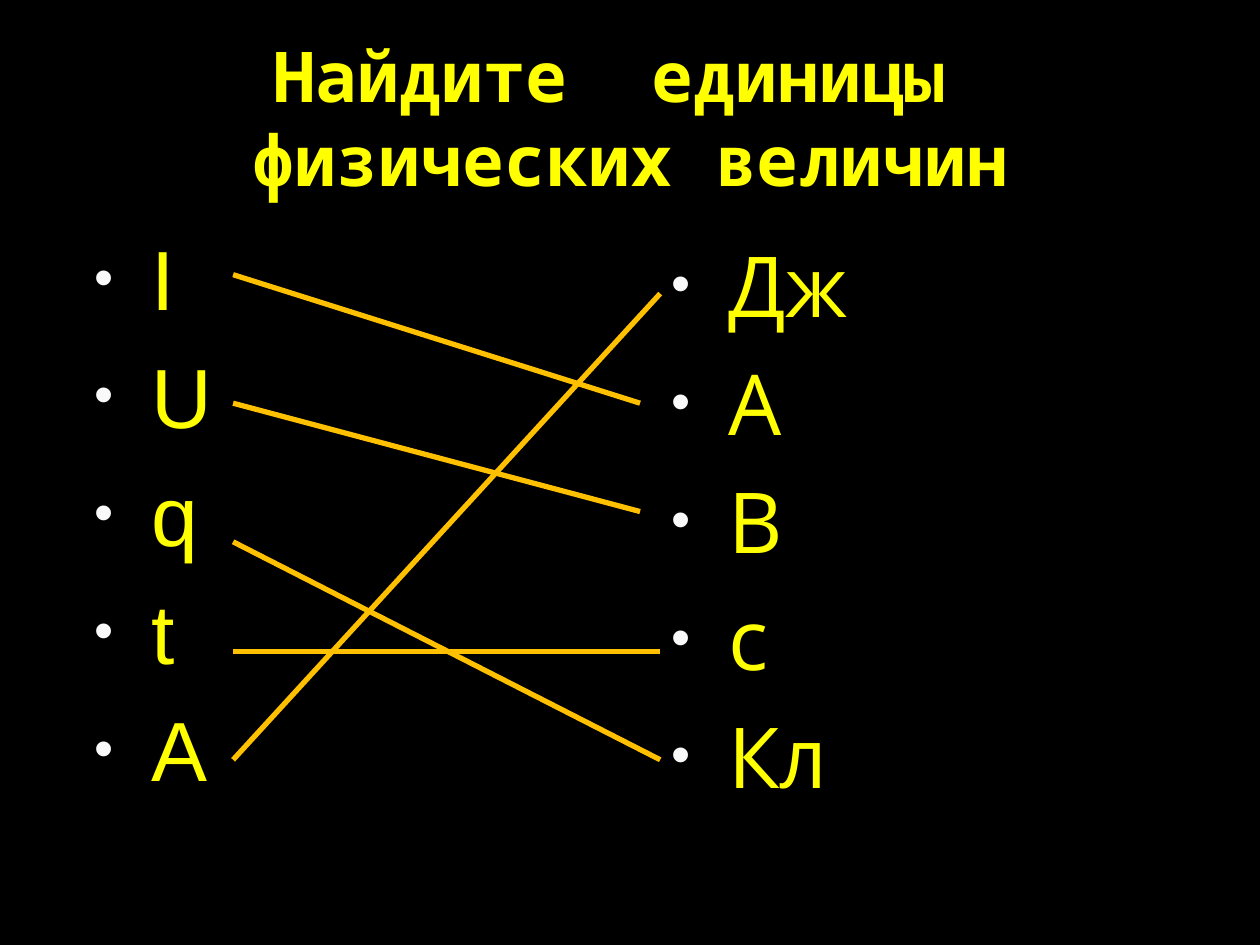
from dataclasses import dataclass

from lxml.etree import SubElement
from pptx import Presentation
from pptx.dml.color import RGBColor
from pptx.enum.shapes import MSO_CONNECTOR
from pptx.enum.text import MSO_ANCHOR, PP_ALIGN
from pptx.oxml.ns import qn
from pptx.util import Inches, Pt


@dataclass(frozen=True)
class Theme:
    background: RGBColor = RGBColor(0, 0, 0)
    text: RGBColor = RGBColor(0xFF, 0xFF, 0)
    line: RGBColor = RGBColor(0xFF, 0xC0, 0)
    bullet: str = "F9F9F9"
    title_font: str = "Noto Sans Mono"
    symbol_font: str = "Arial"
    unit_font: str = "Open Sans"
    title_size: int = 40
    body_size: int = 48
    line_width: int = 3


THEME = Theme()
ROW_PITCH = 67.3  # points from one list baseline to the next

SYMBOLS = ["I", "U", "q", "t", "A"]
UNITS = ["Дж", "А", "В", "с", "Кл"]

# Height at the symbol, then right end at the unit
MATCHES = [
    (2.18, 5.08, 3.2),
    (3.2, 5.08, 4.06),
    (4.3, 5.24, 6.03),
    (5.17, 5.24, 5.17),
    (6.03, 5.24, 2.33),
]


def add_text_frame(s, left, top, width, height):
    box = s.shapes.add_textbox(*map(Inches, (left, top, width, height)))
    tf = box.text_frame
    tf.word_wrap = True
    return tf


def add_run(p, text, font, size, bold=False):
    r = p.add_run()
    r.text = text
    r.font.name = font
    r.font.size = Pt(size)
    r.font.bold = bold
    r.font.color.rgb = THEME.text


def add_title(s, text):
    tf = add_text_frame(s, 0.5, 0.3, 9, 1.25)
    tf.vertical_anchor = MSO_ANCHOR.MIDDLE
    p = tf.paragraphs[0]
    p.alignment = PP_ALIGN.CENTER
    p.line_spacing = Pt(THEME.title_size * 1.2)
    add_run(p, text, THEME.title_font, THEME.title_size, bold=True)


def add_bullet(p):
    pPr = p._p.get_or_add_pPr()
    pPr.set("marL", str(Inches(0.6)))
    pPr.set("indent", str(Inches(-0.45)))
    color = SubElement(pPr, qn("a:buClr"))
    SubElement(color, qn("a:srgbClr"), val=THEME.bullet)
    SubElement(pPr, qn("a:buSzPct"), val="65000")
    SubElement(pPr, qn("a:buFont"), typeface=THEME.symbol_font)
    SubElement(pPr, qn("a:buChar"), char="•")


def add_list(s, left, items, font, line_height):
    tf = add_text_frame(s, left, 1.75, 4.42, 4.95)
    for i, item in enumerate(items):
        p = tf.add_paragraph() if i else tf.paragraphs[0]
        add_bullet(p)
        p.line_spacing = Pt(line_height)
        p.space_before = Pt(ROW_PITCH - line_height if i else 0)
        add_run(p, item, font, THEME.body_size)


def add_match(s, start_y, end_x, end_y):
    line = s.shapes.add_connector(
        MSO_CONNECTOR.STRAIGHT, *map(Inches, (1.85, start_y, end_x, end_y)))
    line.line.color.rgb = THEME.line
    line.line.width = Pt(THEME.line_width)
    SubElement(line._element.spPr, qn("a:effectLst"))


def main():
    prs = Presentation()
    prs.slide_width, prs.slide_height = Inches(10), Inches(7.5)
    s = prs.slides.add_slide(prs.slide_layouts[6])
    s.background.fill.solid()
    s.background.fill.fore_color.rgb = THEME.background

    add_title(s, "Найдите  единицы  физических величин")
    add_list(s, 0.5, SYMBOLS, THEME.symbol_font, 57.7)
    add_list(s, 5.08, UNITS, THEME.unit_font, 61.5)
    for match in MATCHES:
        add_match(s, *match)
    prs.save("out.pptx")


if __name__ == "__main__":
    main()
